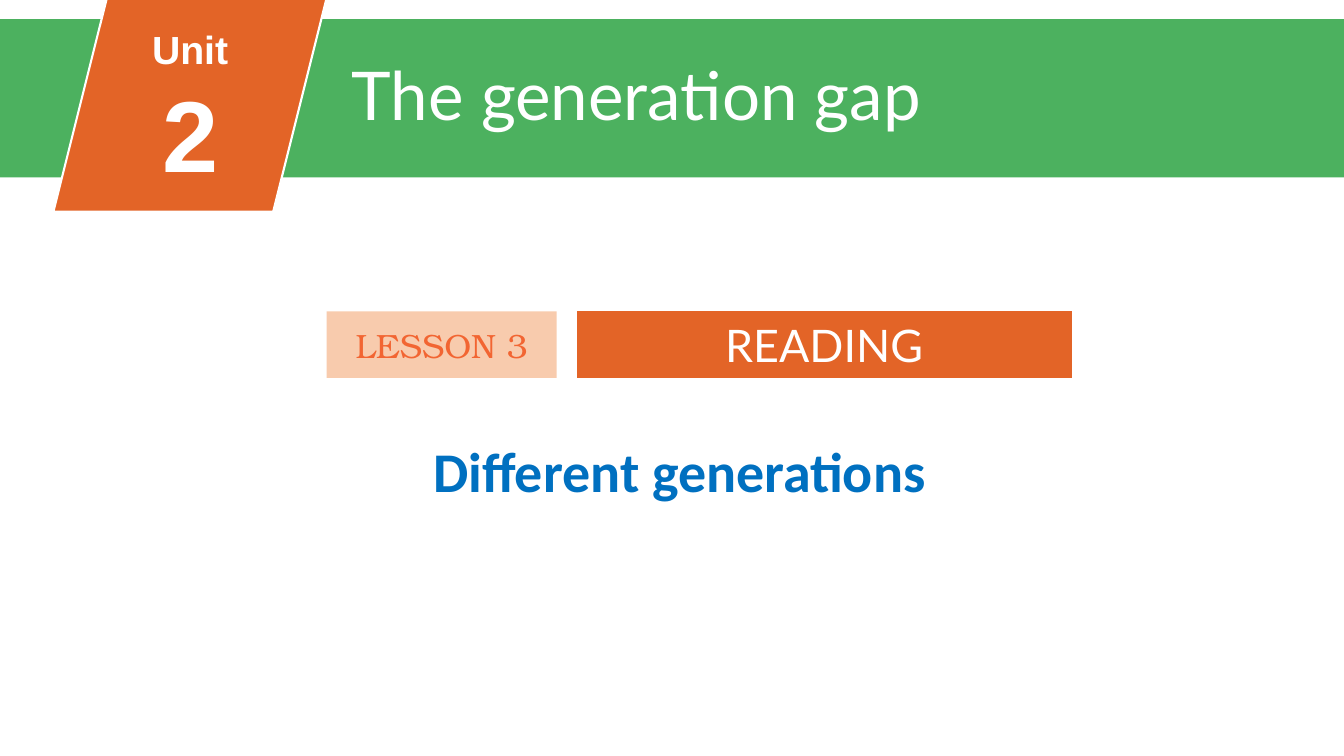
"""Build the title slide of a lesson on the generation gap."""
from dataclasses import dataclass
from typing import Optional

from pptx import Presentation
from pptx.dml.color import RGBColor
from pptx.enum.shapes import MSO_SHAPE
from pptx.enum.text import MSO_ANCHOR, PP_ALIGN
from pptx.shapes.autoshape import Shape
from pptx.slide import Slide
from pptx.text.text import TextFrame
from pptx.util import Pt

SCALE = 9144
WIDE, HIGH = 1333, 750

WHITE = RGBColor(0xFF, 0xFF, 0xFF)
ORANGE = RGBColor(0xE3, 0x64, 0x27)
CORAL = RGBColor(0xF2, 0x65, 0x32)
PEACH = RGBColor(0xF8, 0xCB, 0xAD)
GREEN = RGBColor(0x4C, 0xB1, 0x5F)
BLUE = RGBColor(0x00, 0x70, 0xC0)


@dataclass(frozen=True)
class Line:
    """One line of text with its format."""
    text: str
    size: int
    font: str
    color: RGBColor = WHITE
    bold: bool = False


@dataclass(frozen=True)
class Box:
    """A place on the slide with an optional fill, edge and text."""
    left: int
    top: int
    width: int
    height: int
    fill: Optional[RGBColor] = None
    edge: Optional[RGBColor] = None
    kind: MSO_SHAPE = MSO_SHAPE.RECTANGLE
    lines: tuple[Line, ...] = ()
    center: bool = True


BOXES = (
    Box(571, 307, 493, 69, ORANGE, WHITE, lines=(Line("READING", 32, "Lato"),)),
    Box(420, 428, 830, 77, center=False,
        lines=(Line("Different generations", 40, "Calibri", BLUE, True),)),
    Box(324, 309, 228, 66, PEACH,
        lines=(Line("LESSON 3", 24, "TeX Gyre Bonum", CORAL),)),
    Box(0, 19, WIDE, 157, GREEN),
    Box(53, -2, 271, 212, ORANGE, WHITE, MSO_SHAPE.PARALLELOGRAM),
    Box(339, 48, 889, 91, center=False,
        lines=(Line("The generation gap", 48, "Lato"),)),
    Box(119, 19, 139, 178,
        lines=(Line("Unit", 28, "Arial", bold=True),
               Line("2", 72, "Arial", bold=True))),
)


def write(frame: TextFrame, text: str, *, first: bool, size: int, font: str,
          color: RGBColor, bold: bool, center: bool) -> None:
    """Put one formatted paragraph in the frame."""
    para = frame.paragraphs[0] if first else frame.add_paragraph()
    para.alignment = PP_ALIGN.CENTER if center else PP_ALIGN.LEFT
    run = para.add_run()
    run.text = text
    run.font.size = Pt(size)
    run.font.name = font
    run.font.bold = bold
    run.font.color.rgb = color


def paint(shape: Shape, box: Box) -> None:
    """Set the fill, edge and shadow of a shape."""
    shape.shadow.inherit = False
    shape.fill.solid()
    shape.fill.fore_color.rgb = box.fill
    if box.edge is None:
        shape.line.fill.background()
    else:
        shape.line.color.rgb = box.edge
        shape.line.width = Pt(1.5)


def draw(slide: Slide, box: Box) -> None:
    """Draw a box as a filled shape or as a plain text box."""
    area = [n * SCALE for n in (box.left, box.top, box.width, box.height)]
    if box.fill is None:
        shape = slide.shapes.add_textbox(*area)
    else:
        shape = slide.shapes.add_shape(box.kind, *area)
        paint(shape, box)
    frame = shape.text_frame
    frame.word_wrap = True
    frame.vertical_anchor = MSO_ANCHOR.MIDDLE if box.center else MSO_ANCHOR.TOP
    for i, line in enumerate(box.lines):
        write(frame, line.text, first=i == 0, size=line.size, font=line.font,
              color=line.color, bold=line.bold, center=box.center)


def main() -> None:
    """Build the slide and save it."""
    deck = Presentation()
    deck.slide_width = WIDE * SCALE
    deck.slide_height = HIGH * SCALE
    slide = deck.slides.add_slide(deck.slide_layouts[6])
    for box in BOXES:
        draw(slide, box)
    deck.save("out.pptx")


if __name__ == "__main__":
    main()
